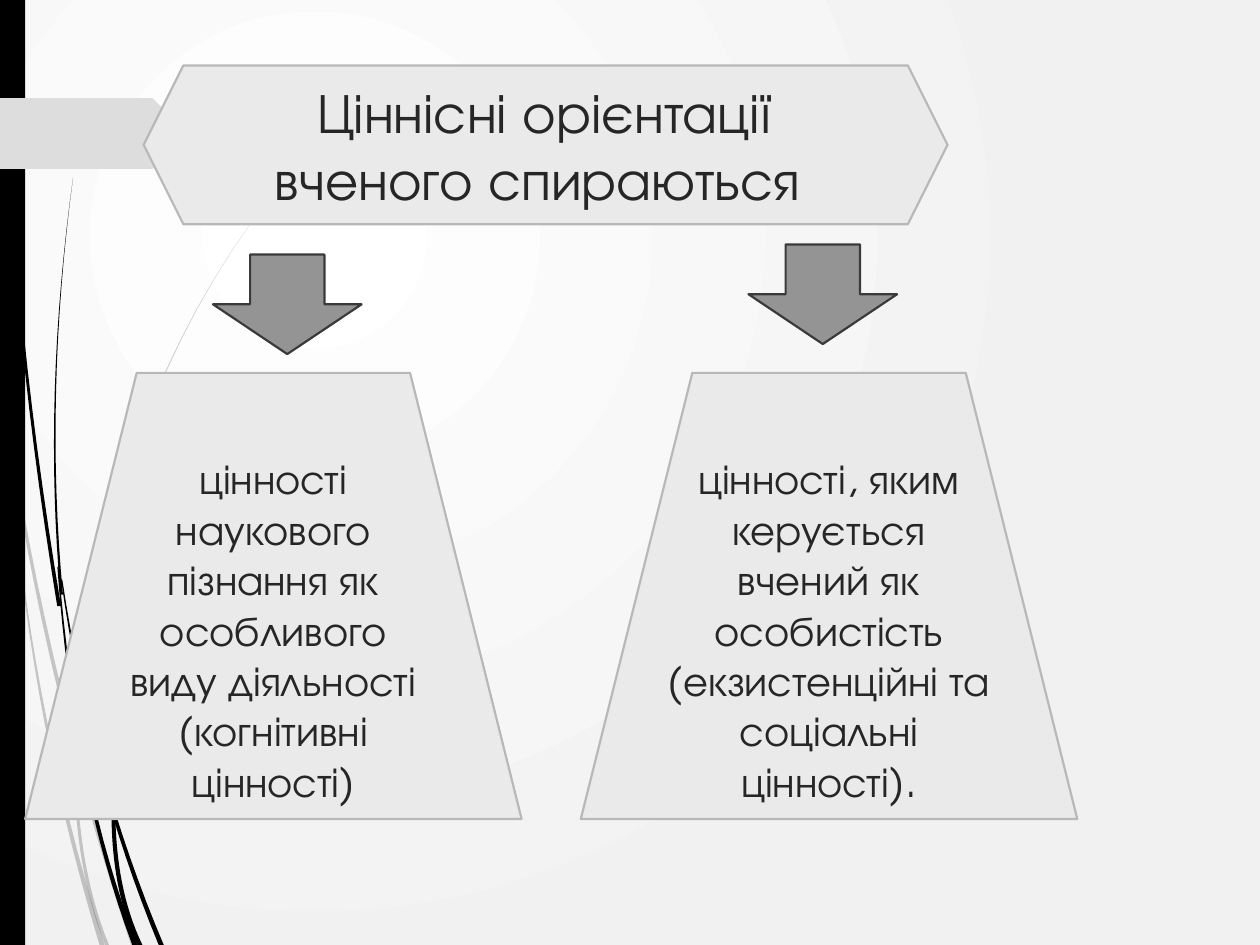
from dataclasses import dataclass
from typing import NamedTuple

from lxml import etree
from pptx import Presentation
from pptx.dml.color import RGBColor
from pptx.enum.shapes import MSO_SHAPE
from pptx.enum.text import MSO_ANCHOR, PP_ALIGN
from pptx.oxml.ns import qn
from pptx.util import Inches, Pt

HEXAGON = MSO_SHAPE.HEXAGON
TRAPEZOID = MSO_SHAPE.TRAPEZOID
DOWN_ARROW = MSO_SHAPE.DOWN_ARROW
RECTANGLE = MSO_SHAPE.RECTANGLE
TAB_ARROW = MSO_SHAPE.PENTAGON
MIDDLE = MSO_ANCHOR.MIDDLE
CENTER = PP_ALIGN.CENTER


@dataclass(frozen=True)
class Theme:
    font: str = "TeX Gyre Adventor"
    title_size: int = 32
    body_size: int = 24
    line_width: float = 1.25
    text: str = "262626"
    panel: str = "EAEAEA"
    panel_line: str = "B8B8B8"
    arrow: str = "949494"
    arrow_line: str = "3A3A3A"
    tab: str = "DDDDDD"
    ink: str = "000000"
    glow: str = "FFFFFF"
    paper: str = "F1F1F1"
    faint_opacity: int = 20


class Box(NamedTuple):
    left: float
    top: float
    width: float
    height: float


class Point(NamedTuple):
    x: float
    y: float


@dataclass(frozen=True)
class Stem:
    start: Point
    middle: Point
    end: Point
    start_width: float
    end_width: float


@dataclass(frozen=True)
class Branch:
    arrow: Box
    panel: Box
    text: str


THEME = Theme()
STEM_STEPS = 16

SIDE_BAR = Box(0, 0, 0.2, 7.5)
TAB = Box(0, 0.78, 1.49, 0.56)
TITLE_BOX = Box(1.14, 0.52, 6.38, 1.26)
TITLE = "Ціннісні орієнтації вченого спираються "

BRANCHES = [
    Branch(Box(1.69, 2.02, 1.18, 0.79), Box(0.2, 2.96, 3.94, 3.54),
           "цінності наукового пізнання як особливого виду діяльності "
           "(когнітивні цінності)"),
    Branch(Box(5.94, 1.94, 1.18, 0.79), Box(4.61, 2.96, 3.94, 3.54),
           "цінності, яким керується вчений як особистість "
           "(екзистенційні та соціальні цінності)."),
]

FAINT_STEMS = [
    Stem(Point(0, 2.9), Point(0.41, 5.21), Point(1.06, 7.5), 0.02, 0.04),
    Stem(Point(0.08, 3.5), Point(0.32, 5.5), Point(0.81, 7.5), 0, 0.04),
    Stem(Point(0.6, 5.86), Point(0.65, 6.75), Point(0.85, 7.5), 0.02, 0.03),
    Stem(Point(2.17, 1.53), Point(1.1, 3.48), Point(0.6, 5.86), 0, 0.02),
]

DARK_STEMS = [
    Stem(Point(0.03, 0), Point(0.15, 2.35), Point(0.47, 4.81), 0.01, 0.03),
    Stem(Point(0.46, 4.5), Point(0.68, 6.13), Point(1.07, 7.5), 0.01, 0.04),
    Stem(Point(0.49, 4.6), Point(0.8, 6.1), Point(1.28, 7.5), 0.01, 0.04),
    Stem(Point(0.58, 1.41), Point(0.44, 3.1), Point(0.49, 4.72), 0, 0.02),
    Stem(Point(2.16, 3.44), Point(1.3, 4.75), Point(0.9, 6.4), 0, 0.03),
    Stem(Point(0.9, 6.4), Point(0.95, 7), Point(1.11, 7.5), 0.03, 0.04),
]


def curve_value(start: float, middle: float, end: float, t: float) -> float:
    control = 2 * middle - (start + end) / 2
    return (1 - t) ** 2 * start + 2 * t * (1 - t) * control + t ** 2 * end


def stem_outline(stem: Stem) -> list[Point]:
    left_edge, right_edge = [], []
    for step in range(STEM_STEPS + 1):
        t = step / STEM_STEPS
        x = curve_value(stem.start.x, stem.middle.x, stem.end.x, t)
        y = curve_value(stem.start.y, stem.middle.y, stem.end.y, t)
        half = (stem.start_width + (stem.end_width - stem.start_width) * t) / 2
        left_edge.append(Point(max(0, x - half), y))
        right_edge.append(Point(x + half, y))
    return left_edge + right_edge[::-1]


def paint(shape, fill: str, line: str | None = None) -> None:
    shape.shadow.inherit = False
    shape.fill.solid()
    shape.fill.fore_color.rgb = RGBColor.from_string(fill)
    if line is None:
        shape.line.fill.background()
    else:
        shape.line.color.rgb = RGBColor.from_string(line)
        shape.line.width = Pt(THEME.line_width)


def set_opacity(shape, percent: int) -> None:
    color = shape._element.spPr.find(qn("a:solidFill"))[0]
    etree.SubElement(color, qn("a:alpha"), val=str(percent * 1000))


def draw_stems(page, stems: list[Stem], opacity: int = 100) -> None:
    group = page.shapes.add_group_shape()
    for stem in stems:
        first, *rest = [(Inches(x), Inches(y)) for x, y in stem_outline(stem)]
        builder = group.shapes.build_freeform(*first)
        builder.add_line_segments(rest, close=True)
        shape = builder.convert_to_shape()
        paint(shape, THEME.ink)
        if opacity < 100:
            set_opacity(shape, opacity)


def draw_preset(page, kind: MSO_SHAPE, box: Box, fill: str, line: str | None = None):
    shape = page.shapes.add_shape(kind, *(Inches(length) for length in box))
    paint(shape, fill, line)
    return shape


def draw_panel(page, kind: MSO_SHAPE, box: Box, text: str, size: int) -> None:
    shape = draw_preset(page, kind, box, THEME.panel, THEME.panel_line)
    frame = shape.text_frame
    frame.word_wrap = True
    frame.vertical_anchor = MIDDLE
    para = frame.paragraphs[0]
    para.alignment = CENTER
    span = para.add_run()
    span.text = text
    span.font.name = THEME.font
    span.font.size = Pt(size)
    span.font.color.rgb = RGBColor.from_string(THEME.text)


def draw_background(page) -> None:
    fill = page.background.fill
    fill.gradient()
    for stop, color, position in zip(fill.gradient_stops, (THEME.glow, THEME.paper), (0, 1)):
        stop.color.rgb = RGBColor.from_string(color)
        stop.position = position
    gradient = page._element.find(".//" + qn("a:gradFill"))
    radial = etree.Element(qn("a:path"), path="circle")
    etree.SubElement(radial, qn("a:fillToRect"), l="50000", t="50000", r="100000", b="100000")
    gradient.replace(gradient.find(qn("a:lin")), radial)


def main() -> None:
    deck = Presentation()
    deck.slide_width, deck.slide_height = Inches(10), Inches(7.5)
    page = deck.slides.add_slide(deck.slide_layouts[6])
    draw_background(page)
    draw_stems(page, FAINT_STEMS, THEME.faint_opacity)
    draw_stems(page, DARK_STEMS)
    draw_preset(page, RECTANGLE, SIDE_BAR, THEME.ink)
    draw_preset(page, TAB_ARROW, TAB, THEME.tab)
    draw_panel(page, HEXAGON, TITLE_BOX, TITLE, THEME.title_size)
    for branch in BRANCHES:
        draw_preset(page, DOWN_ARROW, branch.arrow, THEME.arrow, THEME.arrow_line)
        draw_panel(page, TRAPEZOID, branch.panel, branch.text, THEME.body_size)
    deck.save("out.pptx")


if __name__ == "__main__":
    main()
